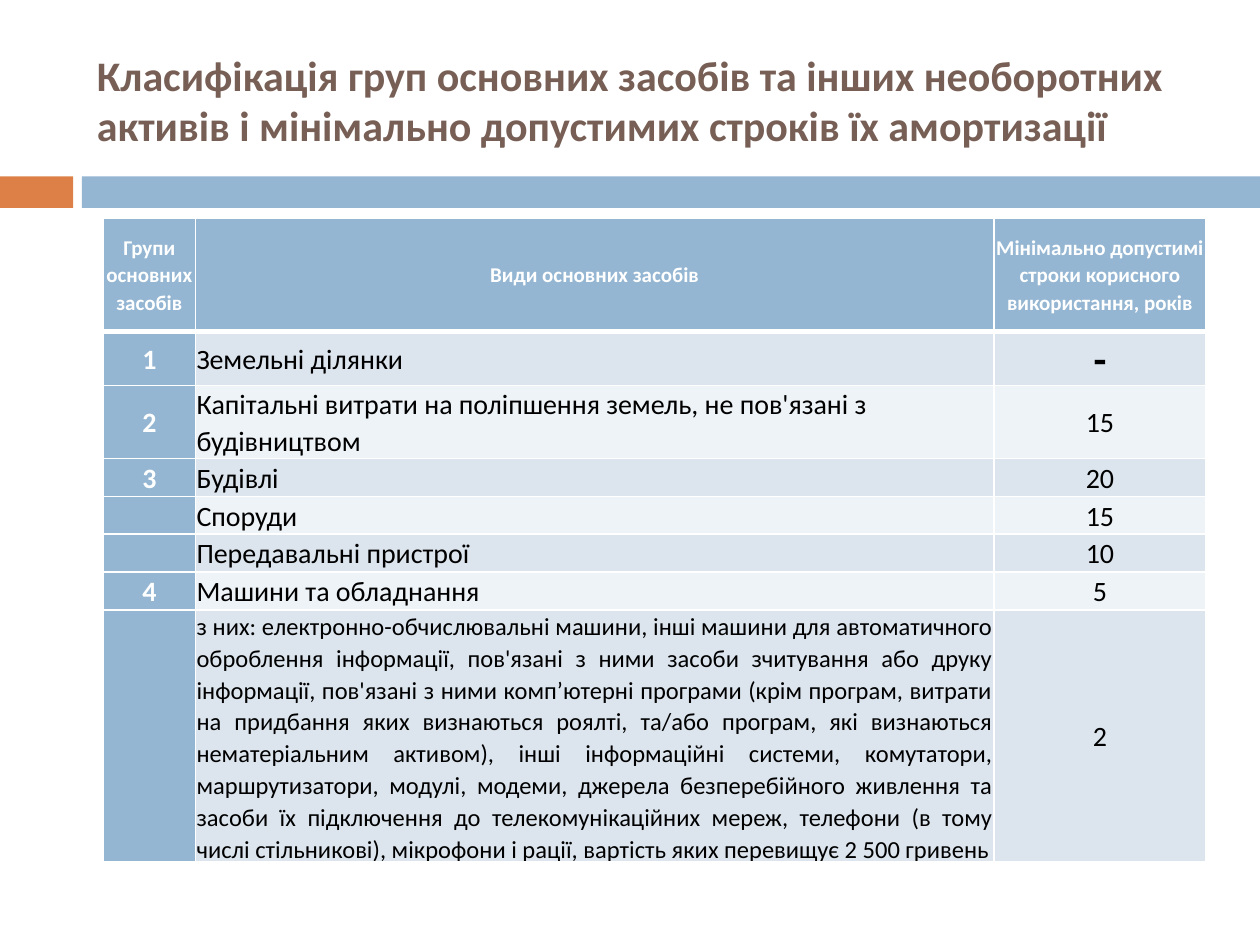
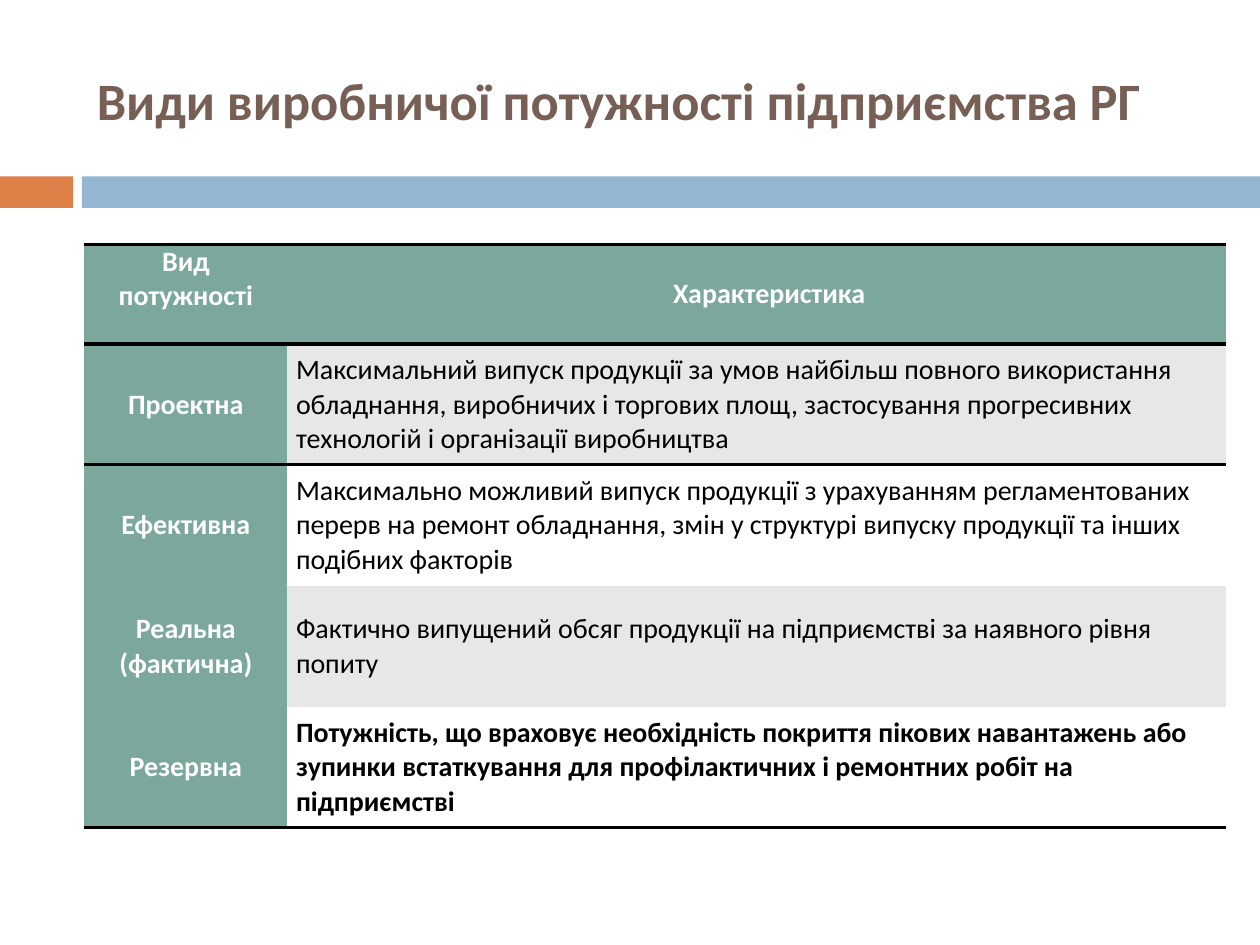
from lxml.etree import SubElement
from pptx import Presentation
from pptx.dml.color import RGBColor
from pptx.enum.shapes import MSO_SHAPE
from pptx.enum.text import MSO_ANCHOR as ANCHOR, PP_ALIGN as ALIGN
from pptx.oxml.ns import qn
from pptx.util import Inches, Pt

FONT = "Calibri"
WHITE, BLACK = "FFFFFF", "000000"
BROWN, ORANGE, BLUE = "775F55", "DD8047", "94B6D2"
BLUE_BANDS = ("DCE5EE", "EEF3F7")
GREEN = "7BA79D"
GREY_BANDS = ("E7E7E7", WHITE)
NO_STYLE_NO_GRID = "{2D5ABB26-0587-4C30-8999-92F81FD0307C}"

ASSET_HEADER = ("Групи\nосновних засобів", "Види основних засобів",
                "Мінімально допустимі строки корисного використання, років")
ASSETS = [
    ("1", "Земельні ділянки", "-"),
    ("2", "Капітальні витрати на поліпшення земель, не пов'язані з будівництвом", "15"),
    ("3", "Будівлі", "20"),
    ("", "Споруди", "15"),
    ("", "Передавальні пристрої", "10"),
    ("4", "Машини та обладнання", "5"),
    ("", "з них: електронно-обчислювальні машини, інші машини для автоматичного "
         "оброблення інформації, пов'язані з ними засоби зчитування або друку "
         "інформації, пов'язані з ними комп’ютерні програми (крім програм, витрати "
         "на придбання яких визнаються роялті, та/або програм, які визнаються "
         "нематеріальним активом), інші інформаційні системи, комутатори, "
         "маршрутизатори, модулі, модеми, джерела безперебійного живлення та "
         "засоби їх підключення до телекомунікаційних мереж, телефони (в тому "
         "числі стільникові), мікрофони і рації, вартість яких перевищує "
         "2 500 гривень", "2"),
]
CAPACITY_HEADER = ("Вид потужності", "Характеристика")
CAPACITIES = [
    ("Проектна", "Максимальний випуск продукції за умов найбільш повного використання "
                 "обладнання, виробничих і торгових площ, застосування прогресивних "
                 "технологій і організації виробництва"),
    ("Ефективна", "Максимально можливий випуск продукції з урахуванням регламентованих "
                  "перерв на ремонт обладнання, змін у структурі випуску продукції та "
                  "інших подібних факторів"),
    ("Реальна (фактична)", "Фактично випущений обсяг продукції на підприємстві за "
                           "наявного рівня попиту"),
    ("Резервна", "Потужність, що враховує необхідність покриття пікових навантажень або "
                 "зупинки встаткування для профілактичних і ремонтних робіт на "
                 "підприємстві"),
]


def rgb(value):
    return RGBColor.from_string(value)


def format_text(tf, size, color, bold=False, align=ALIGN.LEFT, spacing=None):
    for p in tf.paragraphs:
        p.alignment = align
        p.line_spacing = spacing
        for r in p.runs:
            r.font.name, r.font.size, r.font.bold = FONT, Pt(size), bold
            r.font.color.rgb = rgb(color)
        if not p.runs:
            SubElement(p._p, qn("a:endParaRPr"), sz=str(size * 100))


def add_band(slide, left, width, color):
    sp = slide.shapes.add_shape(MSO_SHAPE.RECTANGLE, Inches(left), Inches(1.4),
                                Inches(width), Inches(0.25))
    sp.shadow.inherit = False
    sp.fill.solid()
    sp.fill.fore_color.rgb = rgb(color)
    sp.line.fill.background()


def add_titled_slide(prs, title, size):
    slide = prs.slides.add_slide(prs.slide_layouts[6])
    add_band(slide, 0, 0.58, ORANGE)
    add_band(slide, 0.65, 9.35, BLUE)
    box = slide.shapes.add_textbox(Inches(0.67), Inches(0.25), Inches(8.92), Inches(1.08))
    tf = box.text_frame
    tf.word_wrap = True
    tf.vertical_anchor = ANCHOR.MIDDLE
    tf.text = title
    format_text(tf, size, BROWN, bold=True)
    return slide


def add_plain_table(slide, left, top, widths, heights):
    table = slide.shapes.add_table(len(heights), len(widths), Inches(left), Inches(top),
                                   Inches(sum(widths)), Inches(sum(heights))).table
    table._tbl.tblPr.find(qn("a:tableStyleId")).text = NO_STYLE_NO_GRID
    for column, width in zip(table.columns, widths):
        column.width = Inches(width)
    for row, height in zip(table.rows, heights):
        row.height = Inches(height)
    return table


def set_borders(cell, color, **widths):
    """Draw the sides given as L, R, T or B, with widths in points."""
    tc_pr = cell._tc.get_or_add_tcPr()
    for side in "LRTB":
        if side in widths:
            ln = SubElement(tc_pr, qn(f"a:ln{side}"), w=str(Pt(widths[side])))
            fill = SubElement(ln, qn("a:solidFill"))
            SubElement(fill, qn("a:srgbClr"), val=color)


def fill_cell(cell, text, fill, margin, **style):
    cell.margin_left = cell.margin_right = Inches(margin)
    cell.margin_top = cell.margin_bottom = 0
    cell.vertical_anchor = ANCHOR.MIDDLE
    cell.fill.solid()
    cell.fill.fore_color.rgb = rgb(fill)
    cell.text_frame.text = text
    format_text(cell.text_frame, **style)


def add_asset_table(slide, left, top):
    heights = [0.9, 0.43, 0.58] + [0.3] * 4 + [2.0]
    table = add_plain_table(slide, left, top, [0.73, 6.34, 1.68], heights)
    for i, row in enumerate([ASSET_HEADER] + ASSETS):
        for j, text in enumerate(row):
            cell = table.cell(i, j)
            head = i == 0 or j == 0
            long_note = i == len(ASSETS) and j == 1
            size = 12 if i == 0 else 14 if long_note else 24 if text == "-" else 16
            align = ALIGN.JUSTIFY if long_note else ALIGN.LEFT
            set_borders(cell, WHITE, L=1, R=1, T=3 if i == 1 else 1, B=1 if i else 3)
            fill_cell(cell, text, BLUE if head else BLUE_BANDS[(i - 1) % 2], 0.01,
                      size=size, color=WHITE if head else BLACK,
                      bold=head or text == "-",
                      align=align if i and j == 1 else ALIGN.CENTER, spacing=1.07)


def add_capacity_table(slide, left, top):
    table = add_plain_table(slide, left, top, [1.61, 7.45], [0.79] + [0.96] * 4)
    last = len(CAPACITIES)
    for i, row in enumerate([CAPACITY_HEADER] + CAPACITIES):
        for j, text in enumerate(row):
            cell = table.cell(i, j)
            head = i == 0 or j == 0
            if i == 0:
                set_borders(cell, BLACK, T=2, B=2)
            elif i == 1:
                set_borders(cell, BLACK, T=2)
            elif i == last:
                set_borders(cell, BLACK, B=2)
            fill_cell(cell, text, GREEN if head else GREY_BANDS[(i - 1) % 2], 0.07,
                      size=16, color=WHITE if head else BLACK, bold=head or i == last,
                      align=ALIGN.CENTER if head else ALIGN.LEFT)
    table.cell(0, 0).vertical_anchor = ANCHOR.TOP
    p = table.cell(0, 1).text_frame.paragraphs[0]
    p._p.get_or_add_pPr().set("indent", str(Inches(0.2)))


def main():
    prs = Presentation()
    prs.slide_width, prs.slide_height = Inches(10), Inches(7.5)
    slide = add_titled_slide(prs, "Класифікація груп основних засобів та інших необоротних "
                                  "активів і мінімально допустимих строків їх амортизації", 24)
    add_asset_table(slide, 0.82, 1.73)
    slide = add_titled_slide(prs, "Види виробничої потужності підприємства РГ", 30)
    add_capacity_table(slide, 0.67, 1.94)
    prs.save("out.pptx")


if __name__ == "__main__":
    main()
